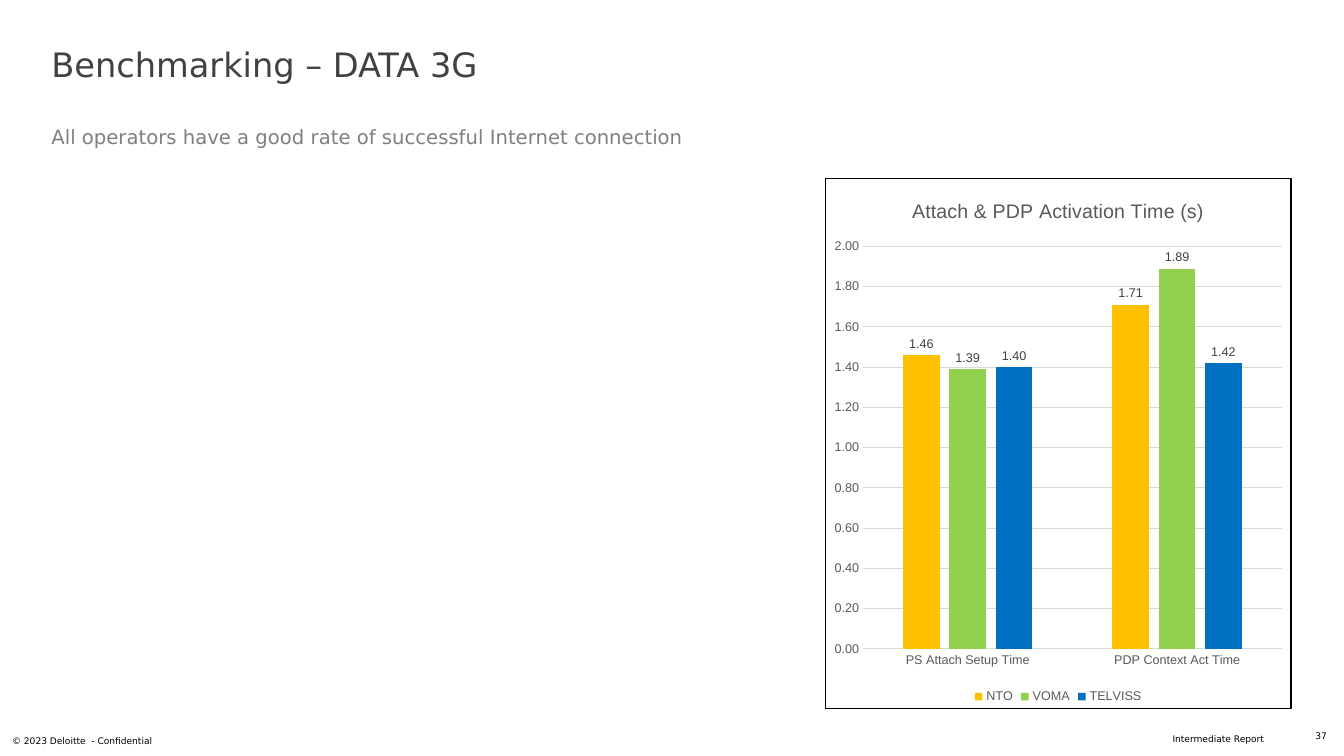
from lxml import etree
from pptx import Presentation
from pptx.chart.data import CategoryChartData
from pptx.dml.color import RGBColor
from pptx.enum.chart import XL_CHART_TYPE, XL_LABEL_POSITION, XL_LEGEND_POSITION, XL_TICK_MARK
from pptx.enum.text import PP_ALIGN
from pptx.util import Inches, Pt

COLUMNS = XL_CHART_TYPE.COLUMN_CLUSTERED
OUTSIDE_END = XL_LABEL_POSITION.OUTSIDE_END
LEGEND_BOTTOM = XL_LEGEND_POSITION.BOTTOM
NO_TICK = XL_TICK_MARK.NONE
LEFT, RIGHT = PP_ALIGN.LEFT, PP_ALIGN.RIGHT

BLACK = RGBColor(0x00, 0x00, 0x00)
TITLE_GREY = RGBColor(0x41, 0x41, 0x41)
SUBTITLE_GREY = RGBColor(0x7F, 0x7F, 0x7F)
AXIS_GREY = RGBColor(0x59, 0x59, 0x59)
LABEL_GREY = RGBColor(0x40, 0x40, 0x40)
GRID_GREY = RGBColor(0xD9, 0xD9, 0xD9)
AMBER = RGBColor(0xFF, 0xC0, 0x00)
GREEN = RGBColor(0x92, 0xD0, 0x50)
BLUE = RGBColor(0x00, 0x70, 0xC0)

TEXT_FONT = "DejaVu Sans"
CHART_FONT = "Arial"
CATEGORIES = ["PS Attach Setup Time", "PDP Context Act Time"]
OPERATORS = [
    ("NTO", (1.46, 1.71), AMBER),
    ("VOMA", (1.39, 1.89), GREEN),
    ("TELVISS", (1.40, 1.42), BLUE),
]
CHART_FRAME = (
    '<c:spPr xmlns:c="http://schemas.openxmlformats.org/drawingml/2006/chart"'
    ' xmlns:a="http://schemas.openxmlformats.org/drawingml/2006/main">'
    '<a:solidFill><a:srgbClr val="FFFFFF"/></a:solidFill>'
    '<a:ln w="9525"><a:solidFill><a:srgbClr val="000000"/></a:solidFill></a:ln>'
    '</c:spPr>'
)


def set_font(font, name, size, color):
    font.name = name
    font.size = Pt(size)
    font.bold = False
    font.color.rgb = color


def add_text(slide, left, top, width, height, lines, align=LEFT):
    """Place lines of (text, size, color, space before) in a box without insets."""
    box = slide.shapes.add_textbox(Inches(left), Inches(top), Inches(width), Inches(height))
    frame = box.text_frame
    frame.word_wrap = True
    frame.margin_left = frame.margin_right = frame.margin_top = frame.margin_bottom = 0
    for index, (text, size, color, space) in enumerate(lines):
        paragraph = frame.add_paragraph() if index else frame.paragraphs[0]
        paragraph.text = text
        paragraph.alignment = align
        if space:
            paragraph.space_before = Pt(space)
        set_font(paragraph.font, TEXT_FONT, size, color)


def add_heading(slide, left, top, width, height):
    add_text(slide, left, top, width, height, [
        ("Benchmarking – DATA 3G", 24, TITLE_GREY, 0),
        ("All operators have a good rate of successful Internet connection",
         14, SUBTITLE_GREY, 29),
    ])


def add_footer(slide, left, top, width):
    """Place the copyright line, report name and page number across the width."""
    right = left + width
    parts = [
        (left, top + 0.05, 4.5, "© 2023 Deloitte  - Confidential", LEFT),
        (right - 1.53, top + 0.03, 1.1, "Intermediate Report", LEFT),
        (right - 0.34, top, 0.34, "37", RIGHT),
    ]
    for part_left, part_top, part_width, text, align in parts:
        add_text(slide, part_left, part_top, part_width, 0.11,
                 [(text, 6.5, BLACK, 0)], align)


def style_axes(chart):
    for axis in (chart.category_axis, chart.value_axis):
        axis.major_tick_mark = axis.minor_tick_mark = NO_TICK
        set_font(axis.tick_labels.font, CHART_FONT, 9, AXIS_GREY)
    values = chart.value_axis
    values.minimum_scale, values.maximum_scale, values.major_unit = 0, 2, 0.2
    values.tick_labels.number_format = "0.00"
    values.tick_labels.number_format_is_linked = False
    values.format.line.fill.background()
    for line in (chart.category_axis.format.line, values.major_gridlines.format.line):
        line.color.rgb = GRID_GREY
        line.width = Pt(0.75)


def style_columns(plot):
    plot.gap_width = 219
    plot.overlap = -27
    plot.vary_by_categories = False
    for series, (_, _, color) in zip(plot.series, OPERATORS):
        series.format.fill.solid()
        series.format.fill.fore_color.rgb = color
        labels = series.data_labels
        labels.show_value = True
        labels.position = OUTSIDE_END
        labels.number_format = "0.00"
        labels.number_format_is_linked = False
        set_font(labels.font, CHART_FONT, 9, LABEL_GREY)


def add_time_chart(slide, left, top, width, height):
    data = CategoryChartData(number_format="0.00")
    data.categories = CATEGORIES
    for name, times, _ in OPERATORS:
        data.add_series(name, times)
    chart = slide.shapes.add_chart(
        COLUMNS, Inches(left), Inches(top), Inches(width), Inches(height), data).chart
    set_font(chart.font, CHART_FONT, 10, BLACK)

    title = chart.chart_title
    title.include_in_layout = False
    paragraph = title.text_frame.paragraphs[0]
    paragraph.text = "Attach & PDP Activation Time (s)"
    set_font(paragraph.font, CHART_FONT, 14, AXIS_GREY)

    chart.has_legend = True
    chart.legend.position = LEGEND_BOTTOM
    chart.legend.include_in_layout = False
    set_font(chart.legend.font, CHART_FONT, 9, AXIS_GREY)

    style_axes(chart)
    style_columns(chart.plots[0])
    chart.element.chart.addnext(etree.fromstring(CHART_FRAME))


def main():
    deck = Presentation()
    deck.slide_width, deck.slide_height = Inches(13.33), Inches(7.5)
    page = deck.slides.add_slide(deck.slide_layouts[6])
    add_heading(page, 0.51, 0.44, 12.31, 1.05)
    add_time_chart(page, 8.18, 1.77, 4.63, 5.26)
    add_footer(page, 0.12, 7.25, 13.04)
    deck.save("out.pptx")


if __name__ == "__main__":
    main()
